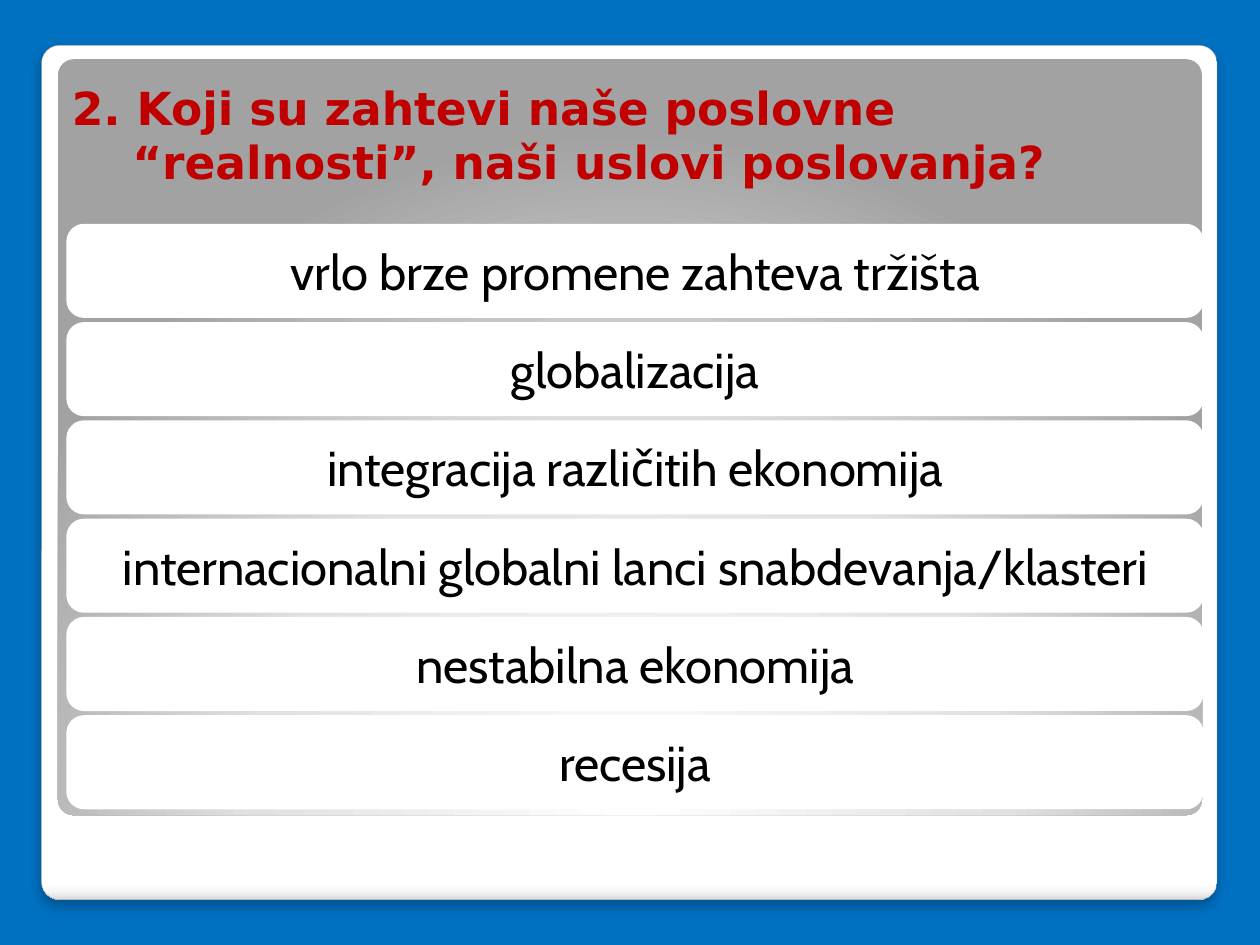
from dataclasses import dataclass

import lxml.etree
import pptx
import pptx.dml.color
import pptx.enum.shapes
import pptx.enum.text
import pptx.oxml
import pptx.oxml.ns
import pptx.util
from pptx.util import Inches

TITLE = "2. Koji su zahtevi naše poslovne “realnosti”, naši uslovi poslovanja?"
DEMANDS = [
    "vrlo brze promene zahteva tržišta",
    "globalizacija",
    "integracija različitih ekonomija",
    "internacionalni globalni lanci snabdevanja/klasteri",
    "nestabilna ekonomija",
    "recesija",
]


@dataclass(frozen=True)
class Theme:
    background: str = "0070C0"
    title: str = "C00000"
    text: str = "000000"
    bar: str = "FFFFFF"
    frame_line: str = "A4A4A4"
    frame_stops: tuple = ((0, "FFFFFF"), (98, "FFFFFF"), (99, "F7F7F7"), (100, "DADADA"))
    panel_stops: tuple = ((0, "FFFFFF"), (55, "E1E1E1"), (100, "A2A2A2"))
    title_font: str = "DejaVu Sans"
    body_font: str = "Cabin"
    title_size: int = 26
    body_size: int = 28


THEME = Theme()
NAMESPACE = pptx.oxml.ns.nsdecls("a")
LINEAR_DOWN = '<a:lin ang="5400000" scaled="0"/>'
CIRCLE_BELOW = ('<a:path path="circle">'
                '<a:fillToRect l="50000" t="175000" r="50000" b="-75000"/></a:path>')


def rgb(color):
    return pptx.dml.color.RGBColor.from_string(color)


def add_round_box(page, left, top, width, height, corner=None):
    box = page.shapes.add_shape(
        pptx.enum.shapes.MSO_SHAPE.ROUNDED_RECTANGLE,
        Inches(left), Inches(top), Inches(width), Inches(height))
    box.shadow.inherit = False
    if corner is not None:
        box.adjustments[0] = corner
    return box


def set_line(box, color, width):
    box.line.color.rgb = rgb(color)
    box.line.width = pptx.util.Pt(width)


def set_gradient(box, stops, direction):
    """Fill a box with percent/colour stops along the given direction."""
    box.fill.background()
    marks = "".join(
        f'<a:gs pos="{place * 1000}"><a:srgbClr val="{color}"/></a:gs>'
        for place, color in stops)
    gradient = pptx.oxml.parse_xml(
        f'<a:gradFill {NAMESPACE} rotWithShape="1">'
        f"<a:gsLst>{marks}</a:gsLst>{direction}</a:gradFill>")
    properties = box.element.spPr
    properties.replace(properties.find(pptx.oxml.ns.qn("a:noFill")), gradient)


def set_shadow(box, color, opacity, blur, distance):
    """Drop a soft shadow straight down."""
    effects = box.element.spPr.find(pptx.oxml.ns.qn("a:effectLst"))
    effects.append(pptx.oxml.parse_xml(
        f'<a:outerShdw {NAMESPACE} blurRad="{pptx.util.Pt(blur)}" '
        f'dist="{pptx.util.Pt(distance)}" dir="5400000" rotWithShape="0">'
        f'<a:srgbClr val="{color}"><a:alpha val="{opacity * 1000}"/></a:srgbClr>'
        "</a:outerShdw>"))


def format_text(para, font, size, color, bold=False):
    for span in para.runs:
        span.font.name = font
        span.font.size = pptx.util.Pt(size)
        span.font.bold = bold
        span.font.color.rgb = rgb(color)


def add_backdrop(page):
    page.background.fill.solid()
    page.background.fill.fore_color.rgb = rgb(THEME.background)

    frame = add_round_box(page, 0.33, 0.36, 9.33, 6.78, corner=0.021)
    set_gradient(frame, THEME.frame_stops, LINEAR_DOWN)
    set_line(frame, THEME.frame_line, 0.16)
    set_shadow(frame, "000000", opacity=25, blur=6, distance=4)

    panel = add_round_box(page, 0.46, 0.47, 9.08, 6, corner=0.021)
    set_gradient(panel, THEME.panel_stops, CIRCLE_BELOW)
    panel.line.fill.background()


def place_title(page):
    title = page.shapes.title
    # Bring the title in front of the backdrop
    page.shapes.element.append(title.element)
    title.left, title.top = Inches(0.47), Inches(0.3)
    title.width, title.height = Inches(9.22), Inches(1.25)
    frame = title.text_frame
    frame.text = TITLE
    frame.word_wrap = True
    frame.auto_size = pptx.enum.text.MSO_AUTO_SIZE.NONE
    frame.vertical_anchor = pptx.enum.text.MSO_ANCHOR.BOTTOM
    para = frame.paragraphs[0]
    para.alignment = pptx.enum.text.PP_ALIGN.LEFT
    # Hanging indent past the number
    indent = Inches(0.48)
    properties = para._p.get_or_add_pPr()
    properties.set("marL", str(indent))
    properties.set("indent", str(-indent))
    format_text(para, THEME.title_font, THEME.title_size, THEME.title, bold=True)


def add_bar(page, top, text):
    bar = add_round_box(page, 0.55, top, 8.98, 0.7)
    bar.fill.solid()
    bar.fill.fore_color.rgb = rgb(THEME.bar)
    set_line(bar, THEME.bar, 3.35)
    frame = bar.text_frame
    frame.text = text
    frame.word_wrap = True
    frame.margin_left = frame.margin_right = 0
    frame.vertical_anchor = pptx.enum.text.MSO_ANCHOR.MIDDLE
    para = frame.paragraphs[0]
    para.alignment = pptx.enum.text.PP_ALIGN.CENTER
    format_text(para, THEME.body_font, THEME.body_size, THEME.text)


def main():
    deck = pptx.Presentation()
    deck.slide_width, deck.slide_height = Inches(10), Inches(7.5)
    title_only = deck.slide_layouts[5]
    page = deck.slides.add_slide(title_only)

    add_backdrop(page)
    place_title(page)

    # Evenly stacked bars, one per demand
    first_top, pitch = 1.8, 0.78
    for row, demand in enumerate(DEMANDS):
        add_bar(page, first_top + row * pitch, demand)

    deck.save("out.pptx")


if __name__ == "__main__":
    main()
